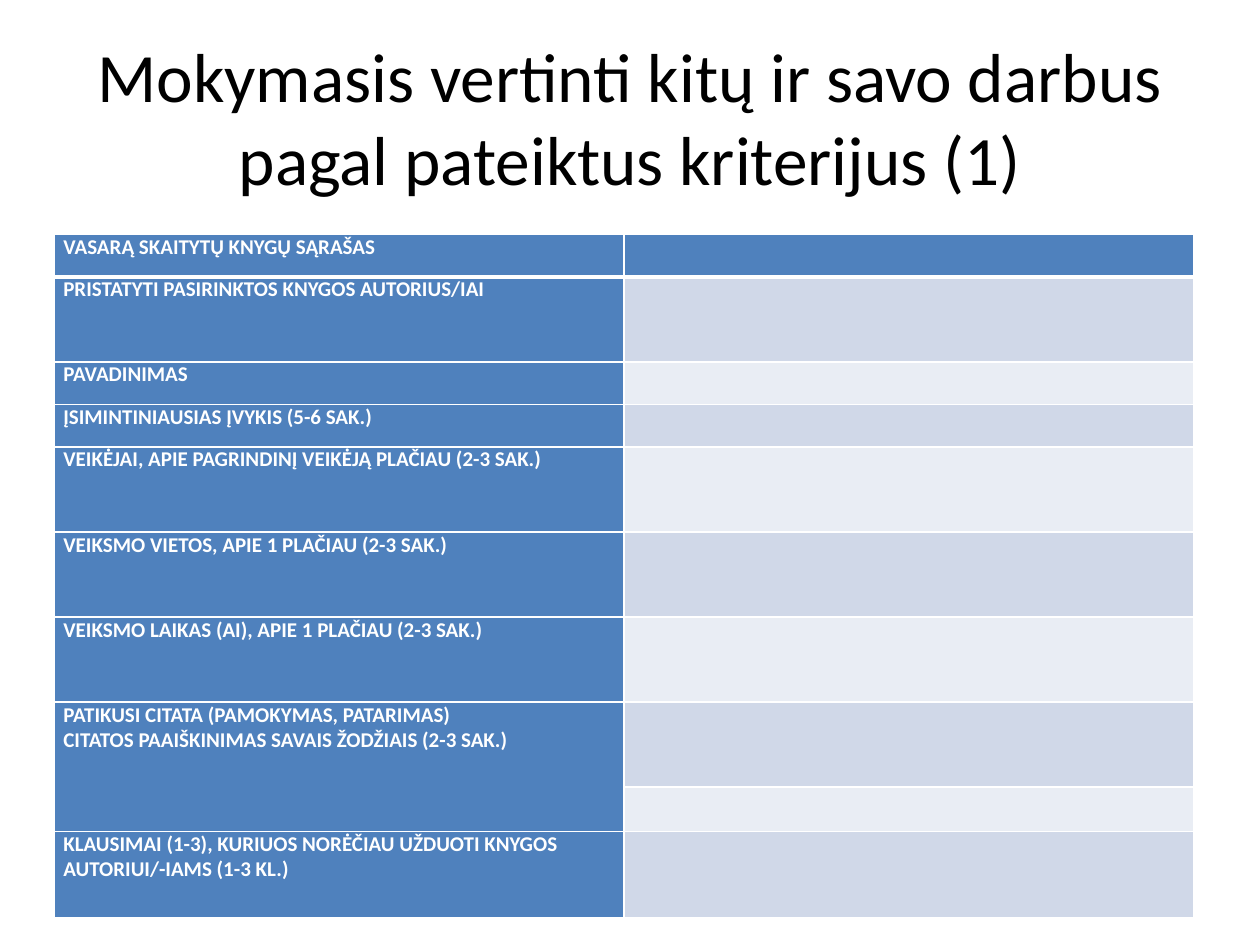
from dataclasses import dataclass

from lxml import etree
from pptx import Presentation
from pptx import util as u
from pptx.dml.color import RGBColor
from pptx.enum import text
from pptx.oxml import ns

Pt = u.Pt


@dataclass(frozen=True)
class Theme:
    font: str = "Calibri"
    title_size: float = 39.6
    cell_size: float = 12
    black: str = "000000"
    white: str = "FFFFFF"
    blue: str = "4F81BD"
    bands: tuple = ("D0D8E8", "E9EDF4")


theme = Theme()


def write(tf, content, *, size, color, bold=False, align=text.PP_ALIGN.LEFT):
    """Write each line of content as a paragraph of the text frame."""
    for i, line in enumerate(content.split("\n")):
        p = tf.paragraphs[0] if i == 0 else tf.add_paragraph()
        p.alignment = align
        r = p.add_run()
        r.text = line
        r.font.name = theme.font
        r.font.size = Pt(size)
        r.font.bold = bold
        r.font.color.rgb = RGBColor.from_string(color)


def add_borders(cell, widths):
    """Draw white cell borders; widths maps L, R, T, B (in that order) to points."""
    tc_pr = cell._tc.get_or_add_tcPr()
    for side, width in widths.items():
        ln = etree.SubElement(tc_pr, ns.qn(f"a:ln{side}"), w=str(Pt(width)))
        fill = etree.SubElement(ln, ns.qn("a:solidFill"))
        etree.SubElement(fill, ns.qn("a:srgbClr"), val=theme.white)


prs = Presentation()
prs.slide_width, prs.slide_height = Pt(720), Pt(540)
s = prs.slides.add_slide(prs.slide_layouts[6])

# Title
sp = s.shapes.add_textbox(Pt(36), Pt(21.6), Pt(648), Pt(90))
tf = sp.text_frame
tf.word_wrap = True
tf.vertical_anchor = text.MSO_ANCHOR.MIDDLE
write(tf, "Mokymasis vertinti kitų ir savo darbus pagal pateiktus kriterijus (1)",
      size=theme.title_size, color=theme.black, align=text.PP_ALIGN.CENTER)

# Criteria table: label and row height
rows = [
    ("VASARĄ SKAITYTŲ KNYGŲ SĄRAŠAS", 24.3),
    ("PRISTATYTI PASIRINKTOS KNYGOS AUTORIUS/IAI", 48.6),
    ("PAVADINIMAS", 24.3),
    ("ĮSIMINTINIAUSIAS ĮVYKIS (5-6 SAK.)", 24.3),
    ("VEIKĖJAI, APIE PAGRINDINĮ VEIKĖJĄ PLAČIAU (2-3 SAK.)", 48.6),
    ("VEIKSMO VIETOS, APIE 1 PLAČIAU (2-3 SAK.)", 48.6),
    ("VEIKSMO LAIKAS (AI), APIE 1 PLAČIAU (2-3 SAK.)", 48.6),
    ("PATIKUSI CITATA (PAMOKYMAS, PATARIMAS)\n"
     "CITATOS PAAIŠKINIMAS SAVAIS ŽODŽIAIS (2-3 SAK.)", 48.6),
    ("", 25.2),
    ("KLAUSIMAI (1-3), KURIUOS NORĖČIAU UŽDUOTI KNYGOS AUTORIUI/-IAMS (1-3 KL.)", 49.5),
]
quote_row = 7
col_width = 325.4
table = s.shapes.add_table(len(rows), 2, Pt(31.2), Pt(134), Pt(2 * col_width),
                           Pt(sum(height for _, height in rows))).table
for col in table.columns:
    col.width = Pt(col_width)

for i, (label, height) in enumerate(rows):
    table.rows[i].height = Pt(height)
    for j in range(2):
        cell = table.cell(i, j)
        cell.margin_left = cell.margin_right = Pt(5)
        cell.margin_top = cell.margin_bottom = 0
        add_borders(cell, {"L": 1, "R": 1, "T": 3 if i == 1 else 1, "B": 3 if i == 0 else 1})
        is_header = i == 0 or j == 0
        cell.fill.solid()
        cell.fill.fore_color.rgb = RGBColor.from_string(
            theme.blue if is_header else theme.bands[(i - 1) % 2])
    if label:
        write(table.cell(i, 0).text_frame, label,
              size=theme.cell_size, color=theme.white, bold=True)

table.cell(quote_row, 0).merge(table.cell(quote_row + 1, 0))

prs.save("out.pptx")
